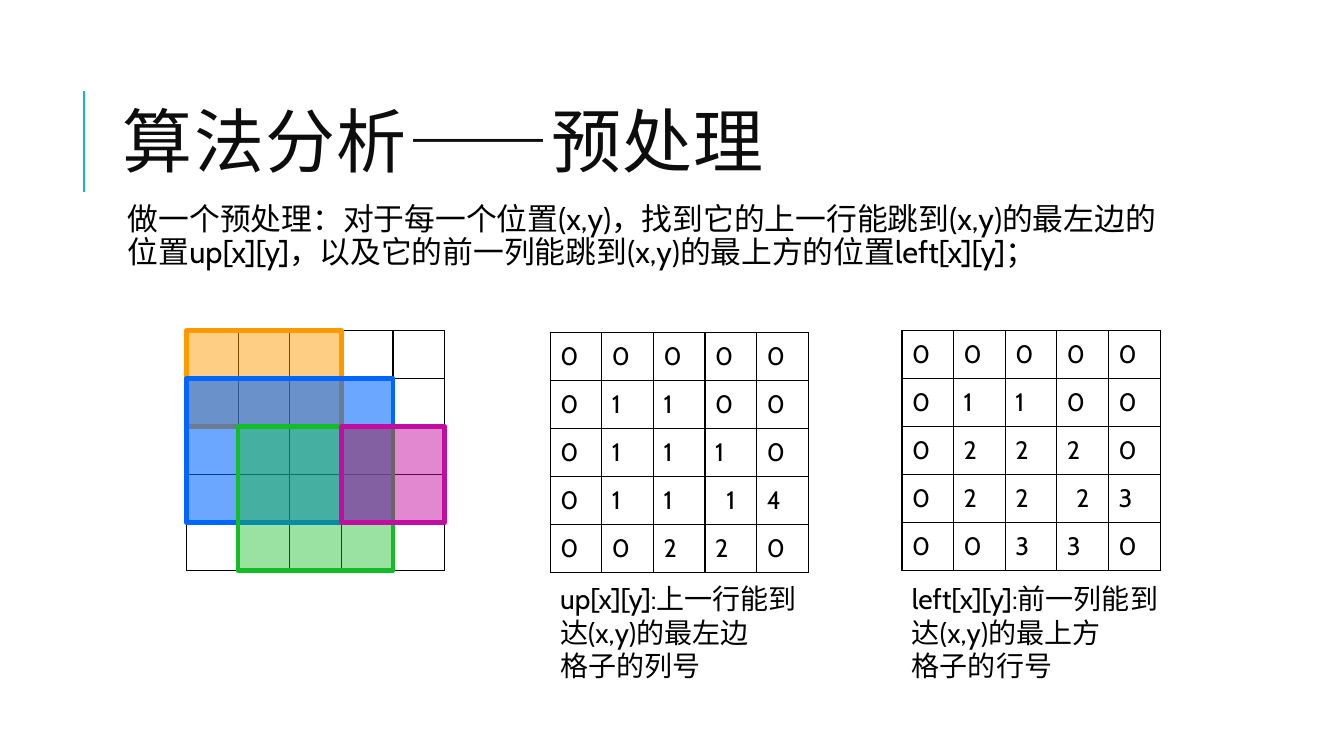
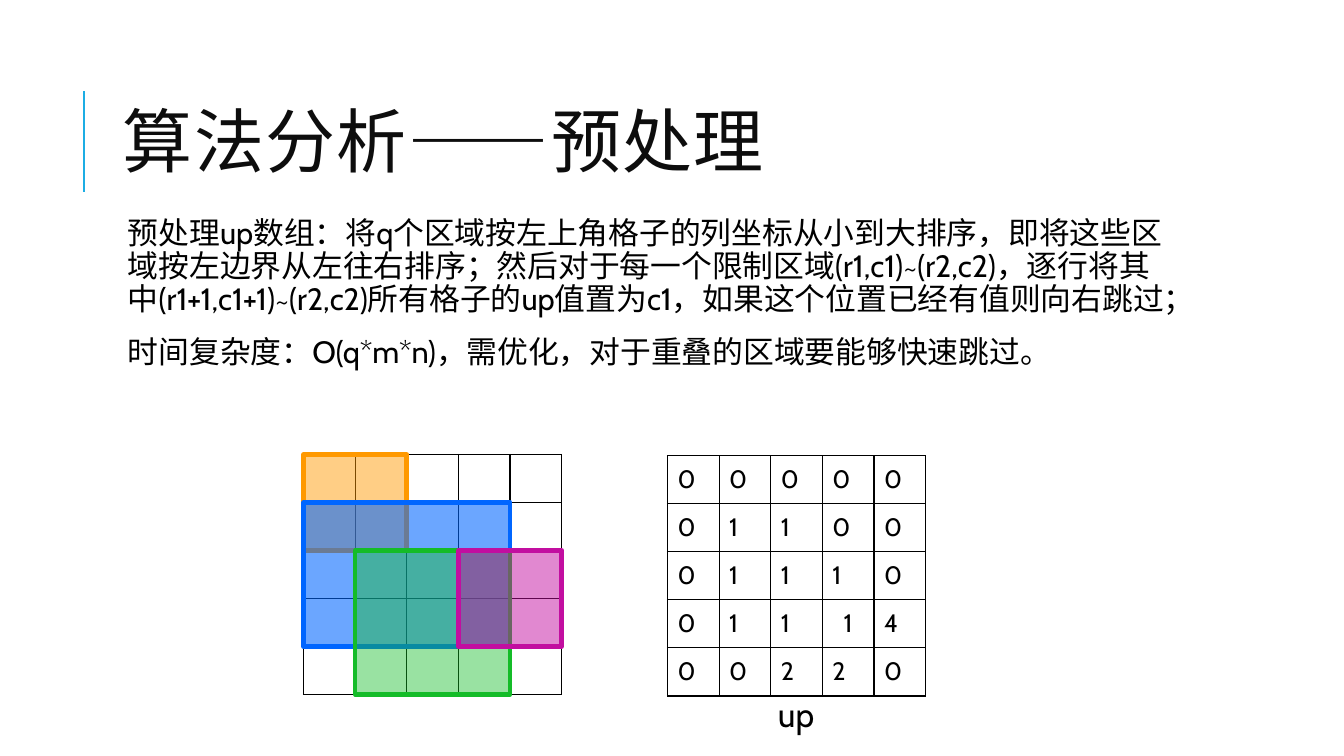
import pptx
import pptx.dml.color
import pptx.enum.shapes
import pptx.enum.text
import pptx.oxml
import pptx.oxml.ns
import pptx.util

Pt = pptx.util.Pt
qn = pptx.oxml.ns.qn
enum = pptx.enum.text
SIDE, WIDE, HIGH = 5, 36.9, 34.3  # grid cells per side, cell size
BLACK, WHITE, ACCENT = "000000", "FFFFFF", "1CADE4"
TITLE = "算法分析——预处理"
NS = "http://schemas.openxmlformats.org/drawingml/2006/main"
EDGE = ('<a:{0} xmlns:a="' + NS + '" w="12700"><a:solidFill>'
        '<a:srgbClr val="' + BLACK + '"/></a:solidFill></a:{0}>')

UP = ["00000", "01100", "01110", "01114", "00220"]
LEFT = ["00000", "01100", "02220", "02223", "00330"]
BLANK = [" " * SIDE] * SIDE

# Zones: column, row, columns, rows, colour, opacity in percent
ZONES = [(0, 1, 4, 3, "0066FF", 58), (1, 2, 3, 3, "14BC28", 43),
         (3, 2, 2, 2, "C20EA0", 49)]

# Each slide: body top, body text, orange columns, grids, captions
SLIDES = [
    {"top": 142,
     "body": ["做一个预处理：对于每一个位置(x,y)，找到它的上一行能跳到(x,y)的最左边的位置up[x][y]，"
              "以及它的前一列能跳到(x,y)的最上方的位置left[x][y]；"],
     "span": 3,
     "grids": [(133.2, 236.2, BLANK), (393, 237.5, UP), (644.3, 236, LEFT)],
     "notes": [(393, 412, 184.3, 20, ["up[x][y]:上一行能到达(x,y)的最左边", "格子的列号"]),
               (644.3, 412, 193.7, 20, ["left[x][y]:前一列能到达(x,y)的最上方", "格子的行号"])]},
    {"top": 152,
     "body": ["预处理up数组：将q个区域按左上角格子的列坐标从小到大排序，即将这些区域按左边界从左往右排序；"
              "然后对于每一个限制区域(r1,c1)~(r2,c2)，逐行将其中(r1+1,c1+1)~(r2,c2)所有格子的up值置为c1，"
              "如果这个位置已经有值则向右跳过；",
              "时间复杂度：O(q*m*n)，需优化，对于重叠的区域要能够快速跳过。"],
     "span": 2,
     "grids": [(216.8, 324.6, BLANK), (476.8, 325.6, UP)],
     "notes": [(548.6, 491.8, 72.7, 24, ["up"])]},
]


def hue(code):
    return pptx.dml.color.RGBColor.from_string(code)


def write(frame, lines, size, face="Cabin", code=BLACK):
    for i, line in enumerate(lines):
        para = frame.add_paragraph() if i else frame.paragraphs[0]
        run = para.add_run()
        run.text = line
        run.font.size = Pt(size)
        run.font.name = face
        run.font.color.rgb = hue(code)


deck = pptx.Presentation()
deck.slide_width, deck.slide_height = Pt(960), Pt(540)

for page in SLIDES:
    slide = deck.slides.add_slide(deck.slide_layouts[5])
    shapes = slide.shapes

    # Accent line beside the title
    rule = shapes.add_connector(pptx.enum.shapes.MSO_CONNECTOR.STRAIGHT,
                                Pt(60), Pt(136.8), Pt(60), Pt(64.8))
    rule.line.color.rgb = hue(ACCENT)
    rule.line.width = Pt(1.5)
    rule._element.spPr.append(pptx.oxml.parse_xml(f'<a:effectLst xmlns:a="{NS}"/>'))

    # Title
    head = shapes.title
    head.left, head.top, head.width, head.height = Pt(80.6), Pt(46), Pt(765.4), Pt(118)
    frame = head.text_frame
    frame.auto_size = enum.MSO_AUTO_SIZE.NONE
    frame.vertical_anchor = enum.MSO_ANCHOR.MIDDLE
    write(frame, [TITLE], 50, "Calibri", "0D0D0D")
    para = frame.paragraphs[0]
    para.alignment = enum.PP_ALIGN.LEFT
    para.line_spacing = 0.8
    para.runs[0].font._element.set("spc", "100")

    # Body text
    frame = shapes.add_textbox(Pt(80.6), Pt(page["top"]), Pt(765.4), Pt(316.8)).text_frame
    frame.word_wrap = True
    frame.margin_left = Pt(10.8)
    frame.margin_right = frame.margin_top = frame.margin_bottom = Pt(3.6)
    write(frame, page["body"], 22)
    for para in frame.paragraphs:
        para.line_spacing = 0.9
        para.space_before, para.space_after = Pt(12), Pt(2)

    # Number grids
    for x, y, rows in page["grids"]:
        table = shapes.add_table(SIDE, SIDE, Pt(x), Pt(y),
                                 Pt(SIDE * WIDE), Pt(SIDE * HIGH)).table
        table.first_row = table.horz_banding = False
        for r, row in enumerate(rows):
            for c, digit in enumerate(row):
                cell = table.cell(r, c)
                props = cell._tc.get_or_add_tcPr()
                for side in ("lnL", "lnR", "lnT", "lnB"):
                    props.append(pptx.oxml.parse_xml(EDGE.format(side)))
                cell.fill.solid()
                cell.fill.fore_color.rgb = hue(WHITE)
                cell.vertical_anchor = enum.MSO_ANCHOR.MIDDLE
                if digit.strip():
                    write(cell.text_frame, [digit], 18)
                    if (r, c) == (3, 3):
                        cell.text_frame.paragraphs[0].alignment = enum.PP_ALIGN.CENTER

    # Coloured zones over the first grid
    x, y, rows = page["grids"][0]
    for c, r, wide, high, code, alpha in [(0, 0, page["span"], 2, "FF9900", 48)] + ZONES:
        zone = shapes.add_shape(pptx.enum.shapes.MSO_SHAPE.RECTANGLE,
                                Pt(x + c * WIDE), Pt(y + r * HIGH),
                                Pt(wide * WIDE), Pt(high * HIGH))
        zone.shadow.inherit = False
        zone.fill.solid()
        zone.fill.fore_color.rgb = hue(code)
        tint = zone._element.spPr.find(qn("a:solidFill")).find(qn("a:srgbClr"))
        tint.append(pptx.oxml.parse_xml(f'<a:alpha xmlns:a="{NS}" val="{alpha * 1000}"/>'))
        zone.line.color.rgb = hue(code)
        zone.line.width = Pt(3.25)

    # Captions under the grids
    for x, y, wide, size, lines in page["notes"]:
        frame = shapes.add_textbox(Pt(x), Pt(y), Pt(wide), Pt(36)).text_frame
        frame.word_wrap = True
        write(frame, lines, size)

deck.save("out.pptx")
